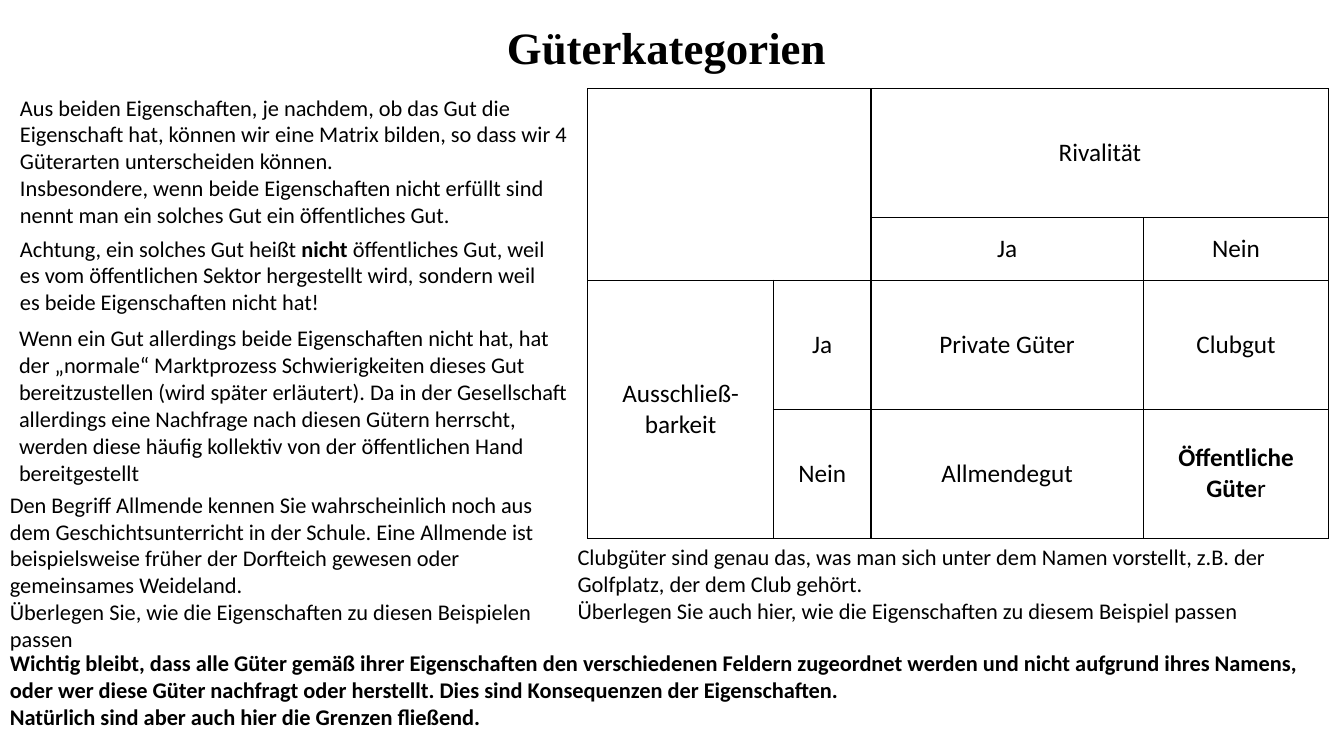
import dataclasses

import lxml.etree
import pptx
import pptx.dml.color
import pptx.enum.text
import pptx.oxml.ns
import pptx.util

PX = 9144  # EMU per px, 100 px to the inch


@dataclasses.dataclass(frozen=True)
class Theme:
    ink: str = "000000"
    paper: str = "FFFFFF"
    title_font: str = "Times New Roman"
    body_font: str = "Calibri"
    title_size: int = 32
    matrix_size: int = 18
    note_size: int = 16
    border: int = 1


THEME = Theme()
CENTER = pptx.enum.text.PP_ALIGN.CENTER
MIDDLE = pptx.enum.text.MSO_ANCHOR.MIDDLE

# Notes: left, top, width, height, bold, paragraphs (text or runs with bold flag)
NOTES = [
    (10, 228, 553, 114, False, [
        [("Achtung, ein solches Gut heißt ", False), ("nicht ", True),
         ("öffentliches Gut, weil es vom öffentlichen Sektor hergestellt wird, "
          "sondern weil es beide Eigenschaften nicht hat!", False)]]),
    (10, 88, 564, 168, False, [
        "Aus beiden Eigenschaften, je nachdem, ob das Gut die Eigenschaft hat, "
        "können wir eine Matrix bilden, so dass wir 4 Güterarten unterscheiden können.",
        "Insbesondere, wenn beide Eigenschaften nicht erfüllt sind nennt man ein "
        "solches Gut ein öffentliches Gut."]),
    (9, 317, 565, 198, False, [
        "Wenn ein Gut allerdings beide Eigenschaften nicht hat, hat der „normale“ "
        "Marktprozess Schwierigkeiten dieses Gut bereitzustellen (wird später "
        "erläutert). Da in der Gesellschaft allerdings eine Nachfrage nach diesen "
        "Gütern herrscht, werden diese häufig kollektiv von der öffentlichen Hand "
        "bereitgestellt"]),
    (0, 482, 574, 186, False, [
        "Den Begriff Allmende kennen Sie wahrscheinlich noch aus dem "
        "Geschichtsunterricht in der Schule. Eine Allmende ist beispielsweise früher "
        "der Dorfteich gewesen oder gemeinsames Weideland.",
        "Überlegen Sie, wie die Eigenschaften zu diesen Beispielen passen"]),
    (563, 534, 755, 102, False, [
        "Clubgüter sind genau das, was man sich unter dem Namen vorstellt, z.B. der "
        "Golfplatz, der dem Club gehört.",
        "Überlegen Sie auch hier, wie die Eigenschaften zu diesem Beispiel passen"]),
    (0, 639, 1333, 102, True, [
        "Wichtig bleibt, dass alle Güter gemäß ihrer Eigenschaften den verschiedenen "
        "Feldern zugeordnet werden und nicht aufgrund ihres Namens, oder wer diese "
        "Güter nachfragt oder herstellt. Dies sind Konsequenzen der Eigenschaften.",
        "Natürlich sind aber auch hier die Grenzen fließend."]),
]

# Matrix of goods: column widths, row heights, merged corners, cell contents
COLUMNS = [184, 97, 270, 184]
ROWS = [128, 62, 128, 128]
MERGES = [((0, 0), (1, 1)), ((0, 2), (0, 3)), ((2, 0), (3, 0))]
GOODS = {
    (0, 2): "Rivalität",
    (1, 2): "Ja",
    (1, 3): "Nein",
    (2, 0): "Ausschließ- barkeit",
    (2, 1): "Ja",
    (2, 2): "Private Güter",
    (2, 3): "Clubgut",
    (3, 1): "Nein",
    (3, 2): "Allmendegut",
    (3, 3): [("Öffentliche Güte", True), ("r", False)],
}


def px(*lengths):
    return [pptx.util.Emu(length * PX) for length in lengths]


def write(paragraph, content, font, size, bold=False, align=None):
    """Fill a paragraph with plain text or with (text, bold) runs."""
    paragraph.alignment = align
    paragraph.font.name = font
    paragraph.font.size = pptx.util.Pt(size)
    paragraph.font.color.rgb = pptx.dml.color.RGBColor.from_string(THEME.ink)
    if isinstance(content, str):
        paragraph.font.bold = bold
        paragraph.add_run().text = content
        return
    for words, strong in content:
        run = paragraph.add_run()
        run.text = words
        run.font.bold = strong


def add_title(slide, text):
    title = slide.shapes.title
    title.left, title.top, title.width, title.height = px(203, 1, 916, 90)
    title.text_frame.vertical_anchor = MIDDLE
    write(title.text_frame.paragraphs[0], text, THEME.title_font,
          THEME.title_size, True, CENTER)


def add_note(slide, left, top, width, height, bold, paragraphs):
    frame = slide.shapes.add_textbox(*px(left, top, width, height)).text_frame
    frame.word_wrap = True
    for index, content in enumerate(paragraphs):
        paragraph = frame.add_paragraph() if index else frame.paragraphs[0]
        write(paragraph, content, THEME.body_font, THEME.note_size, bold)


def draw_borders(cell):
    properties = cell._tc.get_or_add_tcPr()
    qn = pptx.oxml.ns.qn
    for side in ("a:lnL", "a:lnR", "a:lnT", "a:lnB"):
        line = lxml.etree.SubElement(properties, qn(side),
                                     w=str(pptx.util.Pt(THEME.border)))
        fill = lxml.etree.SubElement(line, qn("a:solidFill"))
        lxml.etree.SubElement(fill, qn("a:srgbClr"), val=THEME.ink)


def add_matrix(slide, left, top):
    matrix = slide.shapes.add_table(
        len(ROWS), len(COLUMNS), *px(left, top, sum(COLUMNS), sum(ROWS))).table
    matrix.first_row = matrix.horz_banding = False
    for column, width in zip(matrix.columns, px(*COLUMNS)):
        column.width = width
    for row, height in zip(matrix.rows, px(*ROWS)):
        row.height = height
    for cell in matrix.iter_cells():
        draw_borders(cell)
        cell.fill.solid()
        cell.fill.fore_color.rgb = pptx.dml.color.RGBColor.from_string(THEME.paper)
        cell.vertical_anchor = MIDDLE
    for first, last in MERGES:
        matrix.cell(*first).merge(matrix.cell(*last))
    for place, content in GOODS.items():
        write(matrix.cell(*place).text_frame.paragraphs[0], content,
              THEME.body_font, THEME.matrix_size, align=CENTER)


def main():
    deck = pptx.Presentation()
    deck.slide_width, deck.slide_height = px(1333, 750)
    title_only = deck.slide_layouts[5]
    slide = deck.slides.add_slide(title_only)

    add_title(slide, "Güterkategorien")
    add_matrix(slide, 583, 88)
    for note in NOTES:
        add_note(slide, *note)

    deck.save("out.pptx")


if __name__ == "__main__":
    main()
